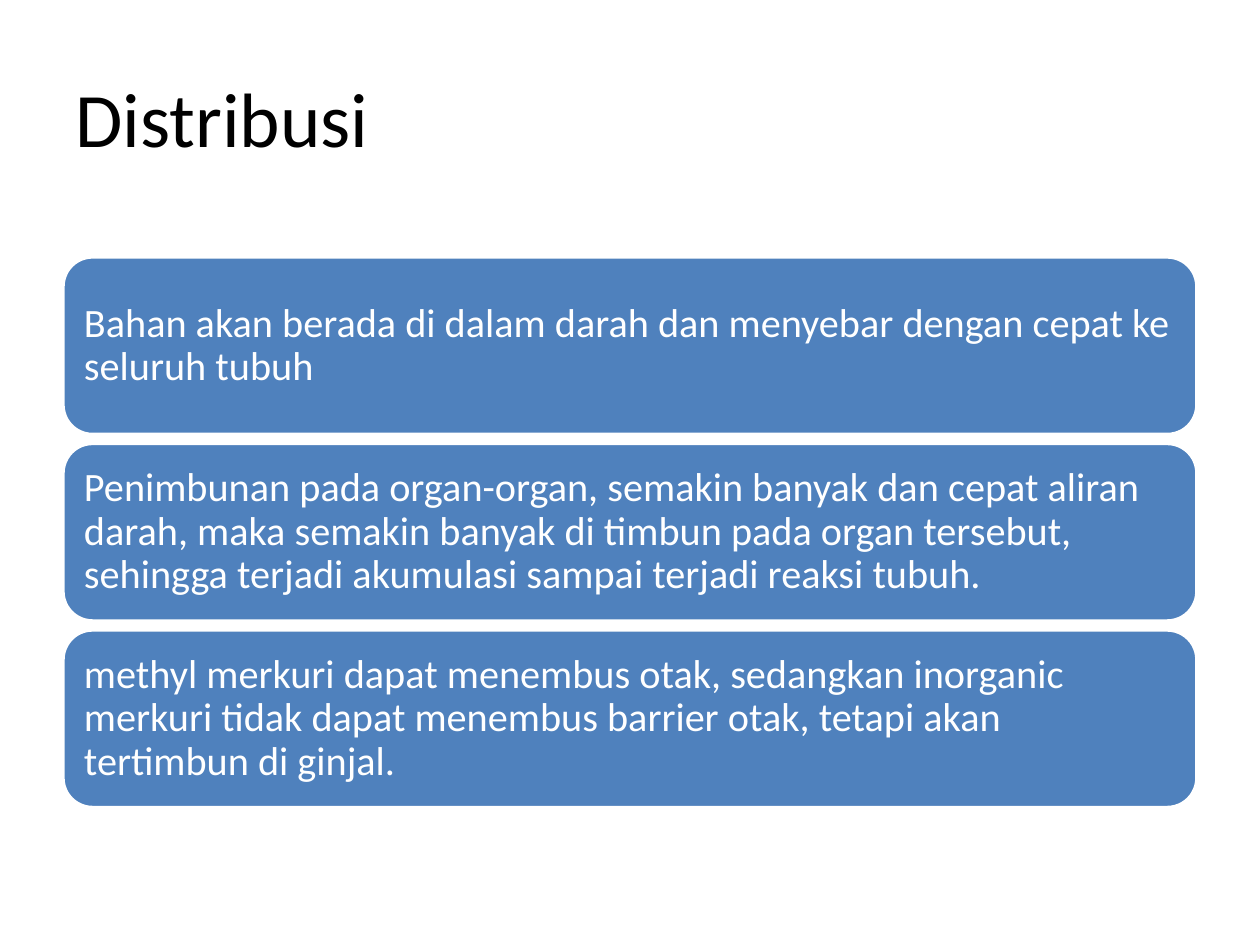
"""Build the "Distribusi" slide: a title above three stacked statement panels."""
from dataclasses import dataclass

from pptx import Presentation
from pptx import util as u
from pptx.dml import color
from pptx.enum import shapes, text


@dataclass(frozen=True)
class Theme:
    font: str = "Calibri"
    ink: str = "000000"
    paper: str = "FFFFFF"
    panel: str = "4F81BD"
    title_size: int = 44
    body_size: int = 23


theme = Theme()


def add_wording(frame, wording, size, hue):
    frame.word_wrap = True
    frame.vertical_anchor = text.MSO_ANCHOR.MIDDLE
    paragraph = frame.paragraphs[0]
    paragraph.alignment = text.PP_ALIGN.LEFT
    run = paragraph.add_run()
    run.text = wording
    run.font.name = theme.font
    run.font.size = u.Pt(size)
    run.font.color.rgb = color.RGBColor.from_string(hue)
    return paragraph


deck = Presentation()
deck.slide_width, deck.slide_height = u.Cm(25.4), u.Cm(19.05)
slide = deck.slides.add_slide(deck.slide_layouts[6])

left, width = u.Cm(1.27), u.Cm(22.86)
heading = slide.shapes.add_textbox(left, u.Cm(0.76), width, u.Cm(3.18))
add_wording(heading.text_frame, "Distribusi", theme.title_size, theme.ink)

statements = [
    "Bahan akan berada di dalam darah dan menyebar dengan cepat ke seluruh tubuh",
    "Penimbunan pada organ-organ, semakin banyak dan cepat aliran darah, maka semakin "
    "banyak di timbun pada organ tersebut, sehingga terjadi akumulasi sampai terjadi "
    "reaksi tubuh.",
    "methyl merkuri dapat menembus otak, sedangkan inorganic merkuri tidak dapat "
    "menembus barrier otak, tetapi akan tertimbun di ginjal.",
]
first_top, panel_height, pitch = u.Cm(5.18), u.Cm(3.58), u.Cm(3.76)

for row, statement in enumerate(statements):
    panel = slide.shapes.add_shape(
        shapes.MSO_SHAPE.ROUNDED_RECTANGLE, left, first_top + row * pitch, width, panel_height
    )
    panel.shadow.inherit = False
    panel.fill.solid()
    panel.fill.fore_color.rgb = color.RGBColor.from_string(theme.panel)
    panel.line.color.rgb = color.RGBColor.from_string(theme.paper)
    panel.line.width = u.Pt(2)
    frame = panel.text_frame
    frame.margin_left = frame.margin_right = u.Cm(0.25)
    frame.margin_top = frame.margin_bottom = u.Cm(0.25)
    paragraph = add_wording(frame, statement, theme.body_size, theme.paper)
    paragraph.line_spacing = 0.9

deck.save("out.pptx")
